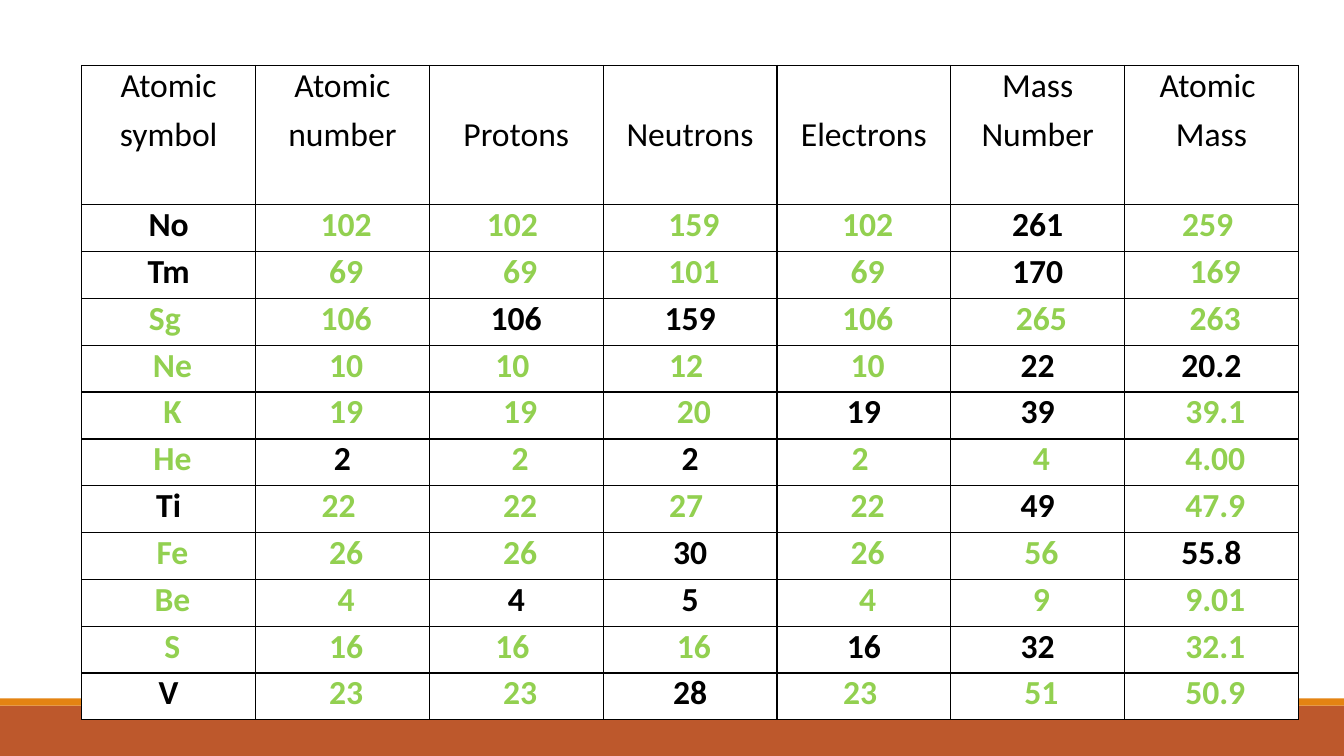
from lxml import etree
from pptx import Presentation
from pptx import util as u
from pptx.dml.color import RGBColor
from pptx.enum import shapes, text
from pptx.oxml import ns

BLACK, GREEN, WHITE = "000000", "92D050", "FFFFFF"
COLUMN_WIDTH = u.Cm(4.38)
HEADER_LINE = u.Cm(1.25)
HARD_SPACE = chr(160)

HEADINGS = ["Atomic/symbol", "Atomic/number", "Protons", "Neutrons",
            "Electrons", "Mass/Number", "Atomic /Mass"]

# A tilde marks a hard space; the answers that carry one are green.
ELEMENTS = """
No   ~102  102~  ~159  ~102  261   259~
Tm   ~69   ~69   ~101  ~69   170   ~169
Sg~  ~106  106   159   ~106  ~265  ~263
~Ne  ~10   10~   12~   ~10   22    20.2
~K   ~19   ~19   ~20   19    39    ~39.1
~He  2     ~2    2     2~    ~4    ~4.00
Ti   22~   ~22   27~   ~22   49    ~47.9
~Fe  ~26   ~26   30    ~26   ~56   55.8
~Be  ~4    4     5     ~4    ~9    ~9.01
~S   ~16   16~   ~16   16    32    ~32.1
V    ~23   ~23   28    23~   ~51   ~50.9
"""


def color(value):
    return RGBColor.from_string(value)


def add_grid(page, top, row_height, rows, bold):
    frame = page.shapes.add_table(len(rows), len(rows[0]), u.Cm(2.06), top,
                                  COLUMN_WIDTH * len(rows[0]), row_height * len(rows))
    table = frame.table
    table.first_row = table.horz_banding = False
    for column in table.columns:
        column.width = COLUMN_WIDTH
    for row, values in zip(table.rows, rows):
        row.height = row_height
        for cell, value in zip(row.cells, values):
            cell.margin_left = cell.margin_right = u.Cm(0.11)
            cell.margin_top = cell.margin_bottom = 0
            properties = cell._tc.get_or_add_tcPr()
            for side in ("a:lnL", "a:lnR", "a:lnT", "a:lnB"):
                border = etree.SubElement(properties, ns.qn(side), w=str(u.Pt(1)))
                solid = etree.SubElement(border, ns.qn("a:solidFill"))
                etree.SubElement(solid, ns.qn("a:srgbClr"), val=BLACK)
            cell.fill.solid()
            cell.fill.fore_color.rgb = color(WHITE)
            cell.text_frame.text = value.replace("~", HARD_SPACE).replace("/", "\n")
            for para in cell.text_frame.paragraphs:
                para.alignment = text.PP_ALIGN.CENTER
                para.space_after = u.Pt(6)
                for span in para.runs:
                    span.font.name = "Calibri"
                    span.font.size = u.Pt(24)
                    span.font.bold = bold
                    span.font.color.rgb = color(GREEN if "~" in value else BLACK)
    return table


deck = Presentation()
deck.slide_width, deck.slide_height = u.Cm(33.87), u.Cm(19.05)
page = deck.slides.add_slide(deck.slide_layouts[6])

for top, height, fill in [(17.78, 1.27, "BD582C"), (17.6, 0.18, "E48312")]:
    band = page.shapes.add_shape(shapes.MSO_SHAPE.RECTANGLE, 0, u.Cm(top),
                                 deck.slide_width, u.Cm(height))
    band.shadow.inherit = False
    band.fill.solid()
    band.fill.fore_color.rgb = color(fill)
    band.line.fill.background()

element_rows = [line.split() for line in ELEMENTS.strip().splitlines()]
add_grid(page, u.Cm(5.16), u.Cm(1.18), element_rows, True)

header = add_grid(page, u.Cm(1.65), u.Cm(3.51), [HEADINGS], False)
for cell, heading in zip(header.rows[0].cells, HEADINGS):
    if "/" not in heading:
        cell.margin_top = HEADER_LINE

deck.save("out.pptx")
